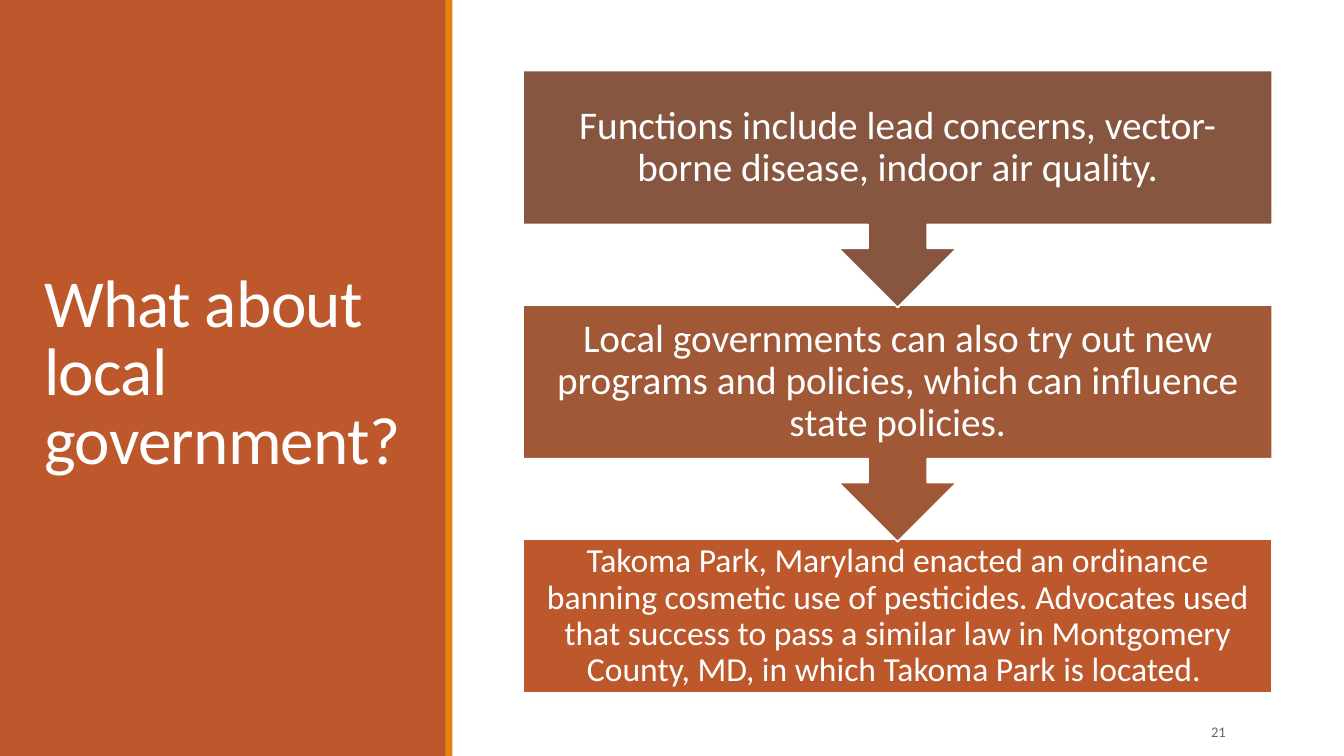
from pptx import Presentation
from pptx.dml.color import RGBColor
from pptx.enum.shapes import MSO_SHAPE
from pptx.enum.text import MSO_ANCHOR, PP_ALIGN
from pptx.util import Pt

COLORS = {
    "white": "FFFFFF",
    "rust": "BD582C",
    "orange": "E48312",
    "brown": "865640",
    "sienna": "A05837",
    "olive": "637052",
}
STEP_LEFT, STEP_TOP, STEP_WIDTH = 373.7, 50.4, 535
STEP_PITCH, BOX_HEIGHT, CALLOUT_HEIGHT = 167.4, 110.1, 169.2
STEPS = [
    ("Functions include lead concerns, vector-borne disease, indoor air quality.",
     "brown", 28, 15.8),
    ("Local governments can also try out new programs and policies, "
     "which can influence state policies.", "sienna", 28, 15.8),
    ("Takoma Park, Maryland enacted an ordinance banning cosmetic use of "
     "pesticides. Advocates used that success to pass a similar law in "
     "Montgomery County, MD, in which Takoma Park is located. ",
     "rust", 24, 13.7),
]


class SlideBuilder:
    def __init__(self, page, font):
        self.page = page
        self.font = font

    def shape(self, kind, left, top, width, height, fill, outline=None):
        shape = self.page.shapes.add_shape(
            kind, Pt(left), Pt(top), Pt(width), Pt(height))
        shape.shadow.inherit = False
        shape.fill.solid()
        shape.fill.fore_color.rgb = RGBColor.from_string(COLORS[fill])
        if outline:
            shape.line.color.rgb = RGBColor.from_string(COLORS[outline])
            shape.line.width = Pt(1.25)
        else:
            shape.line.fill.background()
        return shape

    def fill_text(self, shape, text, size, color="white", align=PP_ALIGN.LEFT,
                  line_spacing=1.0, inset=7.2, tracking=0):
        """Put one vertically centred paragraph in the shape; return it."""
        frame = shape.text_frame
        frame.word_wrap = True
        frame.vertical_anchor = MSO_ANCHOR.MIDDLE
        frame.margin_left = frame.margin_right = Pt(inset)
        frame.margin_top = frame.margin_bottom = Pt(3.6)
        para = frame.paragraphs[0]
        para.alignment = align
        para.line_spacing = line_spacing
        span = para.add_run()
        span.text = text
        span.font.name = self.font
        span.font.size = Pt(size)
        span.font.color.rgb = RGBColor.from_string(COLORS[color])
        if tracking:
            span.font._element.set("spc", str(round(tracking * 100)))
        return para

    def text(self, left, top, width, height, text, size, **style):
        box = self.page.shapes.add_textbox(
            Pt(left), Pt(top), Pt(width), Pt(height))
        return self.fill_text(box, text, size, **style)

    def step(self, index, text, fill, size, inset):
        """Draw a process step; every step but the last points downwards."""
        last = index == len(STEPS) - 1
        kind = MSO_SHAPE.RECTANGLE if last else MSO_SHAPE.DOWN_ARROW_CALLOUT
        height = BOX_HEIGHT if last else CALLOUT_HEIGHT
        shape = self.shape(kind, STEP_LEFT, STEP_TOP + index * STEP_PITCH,
                           STEP_WIDTH, height, fill, outline="white")
        self.fill_text(shape, text, size, align=PP_ALIGN.CENTER,
                       line_spacing=0.9, inset=inset)


def main():
    deck = Presentation()
    deck.slide_width, deck.slide_height = Pt(960), Pt(540)
    page = deck.slides.add_slide(deck.slide_layouts[6])
    builder = SlideBuilder(page, "Calibri")

    builder.shape(MSO_SHAPE.RECTANGLE, 0, 0, 319, 540, "rust")
    builder.text(24.5, 41, 278, 454.3, "What about local government?", 48,
                 line_spacing=0.85, tracking=-0.5)
    builder.shape(MSO_SHAPE.RECTANGLE, 318.2, 0, 5, 540, "orange")
    number = builder.text(797, 508.3, 85.7, 28.8, "21", 10.5, color="olive",
                          align=PP_ALIGN.RIGHT)
    number.space_after = Pt(6)

    # Last step first, so that each arrow tip lies over the box below it.
    for index, step in reversed(list(enumerate(STEPS))):
        builder.step(index, *step)

    deck.save("out.pptx")


if __name__ == "__main__":
    main()
